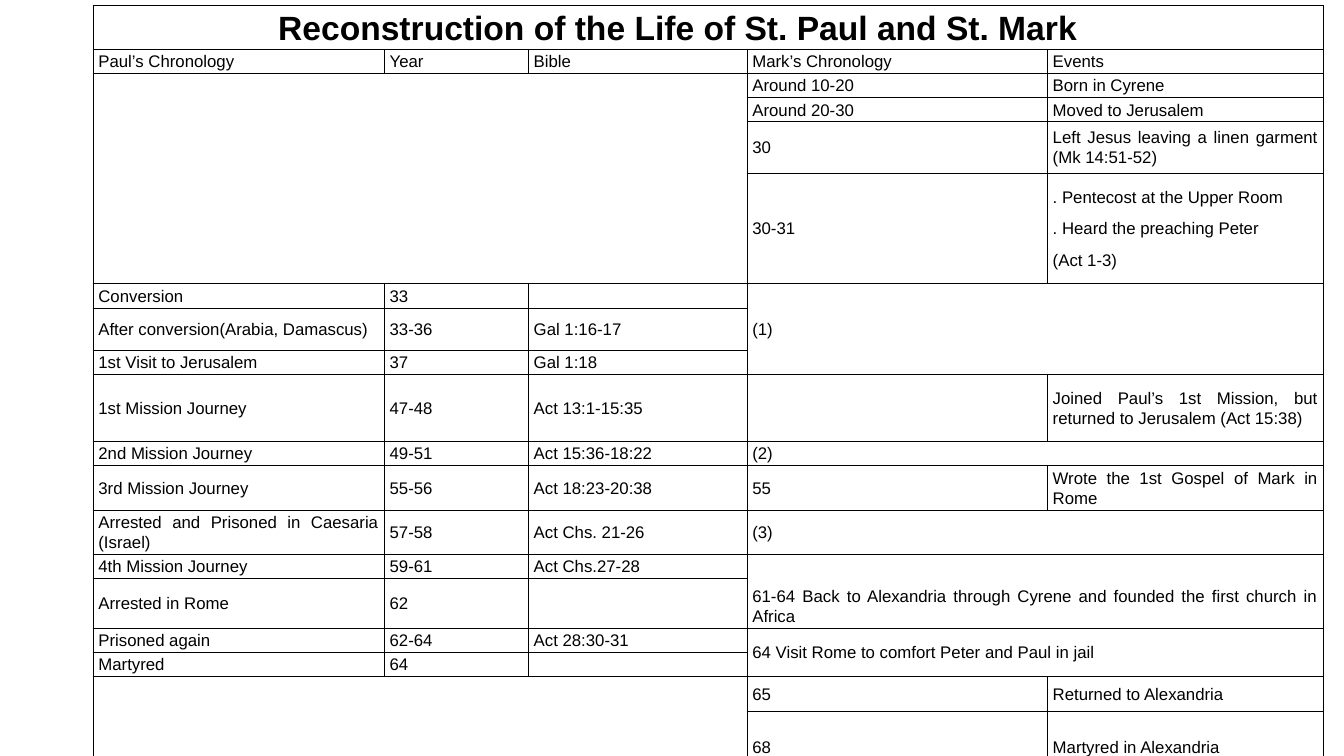
from lxml import etree
from pptx import Presentation
from pptx.dml.color import RGBColor
from pptx.enum.text import MSO_ANCHOR, PP_ALIGN
from pptx.oxml.ns import qn
from pptx.util import Cm, Pt

JUSTIFY, LEFT = PP_ALIGN.JUSTIFY, PP_ALIGN.LEFT
MIDDLE, BOTTOM = MSO_ANCHOR.MIDDLE, MSO_ANCHOR.BOTTOM
COLORS = {"ink": "000000"}
FONT = "Arial"
TITLE_ROW = 0
CHURCH_CELL = (13, 3)

COLUMN_WIDTHS = [7.34, 3.63, 5.51, 7.57, 6.96]

# Row height in cm, then the five columns: Paul's event, year, Bible, Mark's date, event
ROWS = [
    (1.08, "Reconstruction of the Life of St. Paul and St. Mark", "", "", "", ""),
    (0.59, "Paul’s Chronology", "Year", "Bible", "Mark’s Chronology", "Events"),
    (0.59, "", "", "", "Around 10-20", "Born in Cyrene"),
    (0.59, "", "", "", "Around 20-30", "Moved to Jerusalem"),
    (1.29, "", "", "", "30", "Left Jesus leaving a linen garment (Mk 14:51-52)"),
    (2.79, "", "", "", "30-31",
     ". Pentecost at the Upper Room\n. Heard the preaching Peter\n(Act 1-3)"),
    (0.6, "Conversion", "33", "", "(1)", ""),
    (1.05, "After conversion(Arabia, Damascus)", "33-36", "Gal 1:16-17", "", ""),
    (0.6, "1st Visit to Jerusalem", "37", "Gal 1:18", "", ""),
    (1.7, "1st Mission Journey", "47-48", "Act 13:1-15:35", "",
     "Joined Paul’s 1st Mission, but returned to Jerusalem (Act 15:38)"),
    (0.6, "2nd Mission Journey", "49-51", "Act 15:36-18:22", "(2)", ""),
    (1.08, "3rd Mission Journey", "55-56", "Act 18:23-20:38", "55",
     "Wrote the 1st Gospel of Mark in Rome"),
    (1.08, "Arrested and Prisoned in Caesaria (Israel)", "57-58", "Act Chs. 21-26", "(3)", ""),
    (0.6, "4th Mission Journey", "59-61", "Act Chs.27-28",
     "61-64 Back to Alexandria through Cyrene and founded the first church in Africa", ""),
    (1.26, "Arrested in Rome", "62", "", "", ""),
    (0.59, "Prisoned again", "62-64", "Act 28:30-31",
     "64 Visit Rome to comfort Peter and Paul in jail", ""),
    (0.59, "Martyred", "64", "", "", ""),
    (0.88, "", "", "", "65", "Returned to Alexandria"),
    (1.8, "", "", "", "68", "Martyred in Alexandria"),
]

# First row, first column, last row, last column
MERGES = [
    (0, 0, 0, 4), (2, 0, 5, 2), (6, 3, 8, 4), (10, 3, 10, 4),
    (12, 3, 12, 4), (13, 3, 14, 4), (15, 3, 16, 4), (17, 0, 18, 2),
]


def add_borders(cell):
    properties = cell._tc.get_or_add_tcPr()
    for position, side in enumerate(("a:lnL", "a:lnR", "a:lnT", "a:lnB")):
        line = etree.Element(qn(side), w=str(Pt(0.28)))
        fill = etree.SubElement(line, qn("a:solidFill"))
        etree.SubElement(fill, qn("a:srgbClr"), val=COLORS["ink"])
        properties.insert(position, line)


deck = Presentation()
deck.slide_width, deck.slide_height = Cm(33.87), Cm(19.05)
page = deck.slides.add_slide(deck.slide_layouts[6])

frame = page.shapes.add_table(
    len(ROWS), len(COLUMN_WIDTHS), Cm(2.34), Cm(0.13),
    Cm(sum(COLUMN_WIDTHS)), Cm(sum(row[0] for row in ROWS)))
chronology = frame.table
chronology.first_row = False
chronology.horz_banding = False
for column, width in zip(chronology.columns, COLUMN_WIDTHS):
    column.width = Cm(width)

for row_index, (height, *texts) in enumerate(ROWS):
    chronology.rows[row_index].height = Cm(height)
    is_title = row_index == TITLE_ROW
    for column_index, text in enumerate(texts):
        cell = chronology.cell(row_index, column_index)
        cell.fill.background()
        add_borders(cell)
        cell.margin_left = Cm(4.67 if is_title else 0.14)
        cell.margin_right = Cm(0.14)
        cell.margin_top = cell.margin_bottom = Cm(0.05)
        cell.vertical_anchor = BOTTOM if (row_index, column_index) == CHURCH_CELL else MIDDLE
        for line_index, line_text in enumerate(text.split("\n")):
            body = cell.text_frame
            para = body.add_paragraph() if line_index else body.paragraphs[0]
            para.alignment = LEFT if is_title else JUSTIFY
            para.line_spacing = 1.07
            para.space_after = Pt(8)
            if not line_text:
                # An empty cell keeps its row low only with a small end mark
                etree.SubElement(para._p, qn("a:endParaRPr"), sz="1200")
                continue
            span = para.add_run()
            span.text = line_text
            span.font.name = FONT
            span.font.size = Pt(24 if is_title else 12)
            span.font.bold = is_title
            span.font.color.rgb = RGBColor.from_string(COLORS["ink"])

for top, left, bottom, right in MERGES:
    chronology.cell(top, left).merge(chronology.cell(bottom, right))

deck.save("out.pptx")
